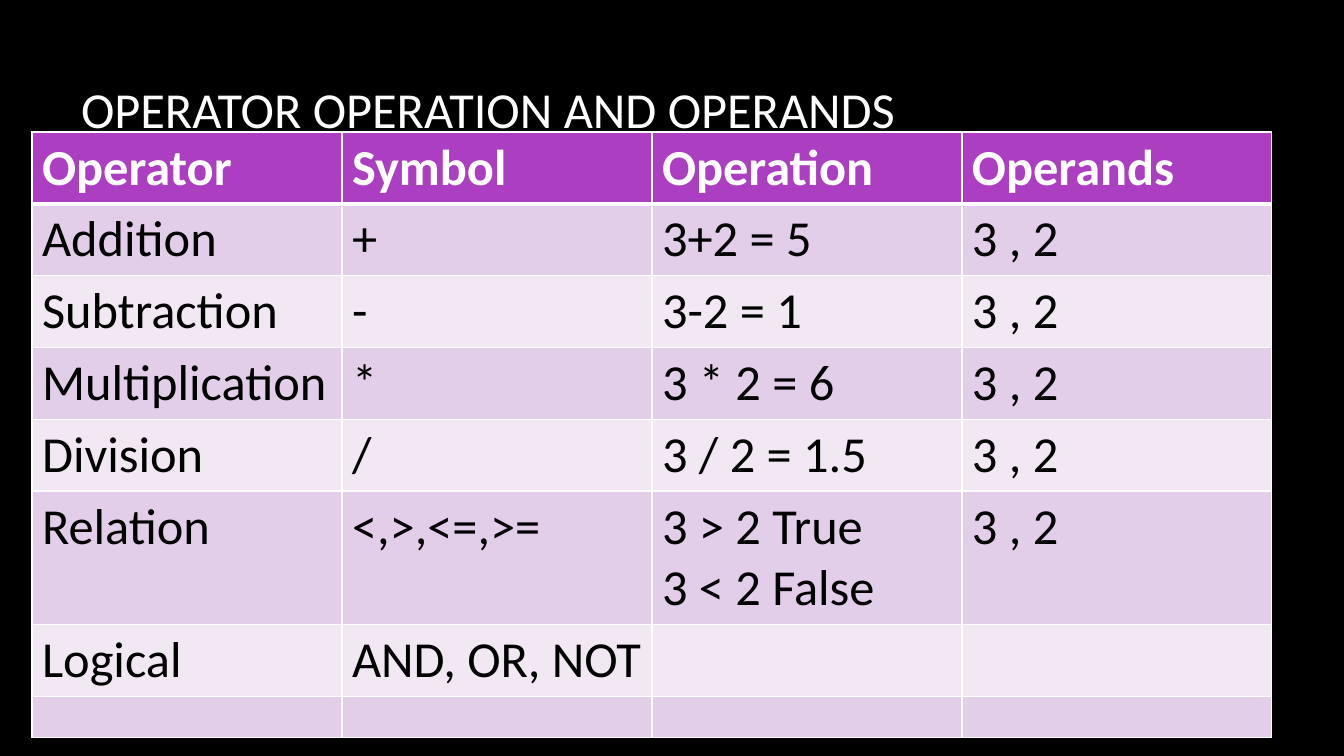
from pptx import Presentation
from pptx.dml.color import RGBColor
from pptx.enum.text import MSO_ANCHOR, PP_ALIGN
from pptx.oxml import parse_xml
from pptx.oxml.ns import nsdecls
from pptx.util import Pt

LEFT = PP_ALIGN.LEFT
MIDDLE = MSO_ANCHOR.MIDDLE
PX = 914400 / 100.8
TITLE_ONLY = 5

HEADER_FILL = "AC3EC1"
BAND_FILLS = ["F1E8F4", "E3CEE9"]
ROWS = [
    ["Operator", "Symbol", "Operation", "Operands"],
    ["Addition", "+", "3+2 = 5", "3 , 2"],
    ["Subtraction", "-", "3-2 = 1", "3 , 2"],
    ["Multiplication", "*", "3 * 2 = 6", "3 , 2"],
    ["Division", "/", "3 / 2 = 1.5", "3 , 2"],
    ["Relation", "<,>,<=,>=", "3 > 2 True\n3 < 2 False", "3 , 2"],
    ["Logical", "AND, OR, NOT", "", ""],
    ["", "", "", ""],
]
ROW_HEIGHTS = [71, 71, 71, 71, 71, 133, 71, 41]
COLUMN_WIDTH = 310


def color(value):
    return RGBColor.from_string(value)


def write(frame, text, text_color, bold):
    frame.text = text
    for para in frame.paragraphs:
        para.alignment = LEFT
        for span in para.runs:
            span.font.name = "Calibri"
            span.font.size = Pt(36)
            span.font.bold = bold
            span.font.color.rgb = color(text_color)


deck = Presentation()
deck.slide_width = round(1344 * PX)
deck.slide_height = round(756 * PX)
page = deck.slides.add_slide(deck.slide_layouts[TITLE_ONLY])
page.background.fill.solid()
page.background.fill.fore_color.rgb = color("000000")

title = page.shapes.title
title.left, title.top, title.width, title.height = [
    round(length * PX) for length in (71, 28, 1117, 160)
]
title.text_frame.vertical_anchor = MIDDLE
write(title.text_frame, "OPERATOR OPERATION AND OPERANDS", "FFFFFF", False)

column_count = len(ROWS[0])
table_box = [
    round(length * PX)
    for length in (32, 132, COLUMN_WIDTH * column_count, sum(ROW_HEIGHTS))
]
table = page.shapes.add_table(len(ROWS), column_count, *table_box).table
for column in table.columns:
    column.width = round(COLUMN_WIDTH * PX)

for row_index, texts in enumerate(ROWS):
    table.rows[row_index].height = round(ROW_HEIGHTS[row_index] * PX)
    header = row_index == 0
    edge_widths = {
        "lnL": 1,
        "lnR": 1,
        "lnT": 3 if row_index == 1 else 1,
        "lnB": 3 if header else 1,
    }
    for column_index, text in enumerate(texts):
        cell = table.cell(row_index, column_index)
        write(cell.text_frame, text, "FFFFFF" if header else "000000", header)
        properties = cell._tc.get_or_add_tcPr()
        for edge, width in edge_widths.items():
            properties.append(parse_xml(
                f'<a:{edge} {nsdecls("a")} w="{Pt(width)}"><a:solidFill>'
                f'<a:srgbClr val="FFFFFF"/></a:solidFill></a:{edge}>'
            ))
        cell.fill.solid()
        cell.fill.fore_color.rgb = color(
            HEADER_FILL if header else BAND_FILLS[row_index % 2]
        )

deck.save("out.pptx")
